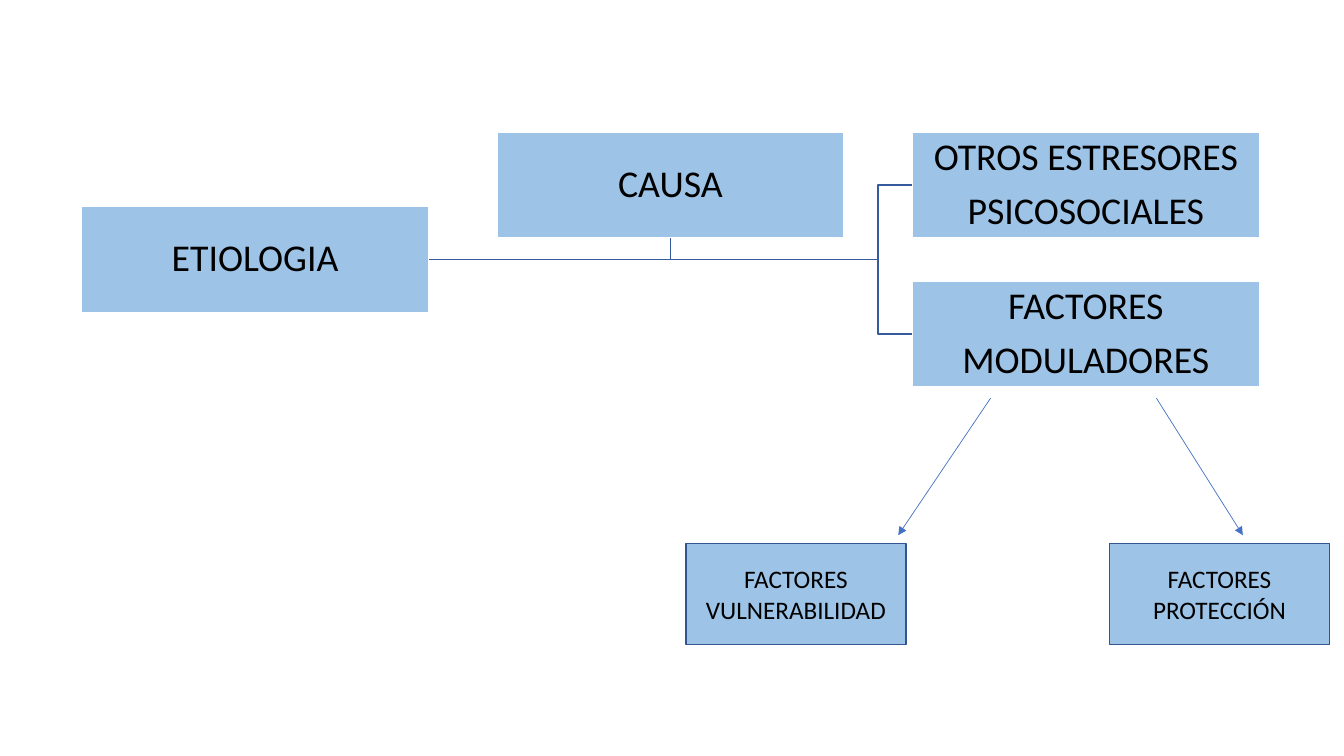
from dataclasses import dataclass

from lxml.etree import SubElement
from pptx import Presentation
from pptx.dml.color import RGBColor
from pptx.enum.shapes import MSO_CONNECTOR, MSO_SHAPE
from pptx.enum.text import MSO_ANCHOR, PP_ALIGN
from pptx.oxml.ns import qn
from pptx.util import Pt


@dataclass(frozen=True)
class Theme:
    font: str = "Calibri"
    tree_size: float = 27
    factor_size: float = 18
    box_fill: RGBColor = RGBColor(0x9D, 0xC3, 0xE6)
    text: RGBColor = RGBColor(0, 0, 0)
    tree_border: RGBColor = RGBColor(0xFF, 0xFF, 0xFF)
    branch: RGBColor = RGBColor(0x36, 0x5B, 0x9D)
    factor_border: RGBColor = RGBColor(0x32, 0x54, 0x91)
    arrow: RGBColor = RGBColor(0x44, 0x72, 0xC4)


THEME = Theme()

# Tree grid: columns from left to right, rows half a step apart
BOX_WIDTH, BOX_HEIGHT = 248, 75.4
TREE_LEFT, TREE_TOP = 58.2, 94.4
COLUMN_STEP, ROW_STEP = 296.7, 53.3

# Factor boxes below the tree
FACTOR_WIDTH, FACTOR_HEIGHT, FACTOR_TOP = 157.2, 72, 388.2
ARROW_TOP, ARROW_BOTTOM = 284.4, 382.3


def column_left(column):
    return TREE_LEFT + column * COLUMN_STEP


def row_middle(row):
    return TREE_TOP + row * ROW_STEP + BOX_HEIGHT / 2


def add_box(slide, lines, left, top, width, height, border, size):
    """Add a filled box with one centred paragraph per line."""
    box = slide.shapes.add_shape(
        MSO_SHAPE.RECTANGLE, Pt(left), Pt(top), Pt(width), Pt(height))
    box.shadow.inherit = False
    box.fill.solid()
    box.fill.fore_color.rgb = THEME.box_fill
    box.line.color.rgb = border
    box.line.width = Pt(1)
    frame = box.text_frame
    frame.word_wrap = True
    frame.vertical_anchor = MSO_ANCHOR.MIDDLE
    for index, line in enumerate(lines):
        paragraph = frame.paragraphs[0] if index == 0 else frame.add_paragraph()
        paragraph.text = line
        paragraph.alignment = PP_ALIGN.CENTER
        paragraph.font.name = THEME.font
        paragraph.font.size = Pt(size)
        paragraph.font.color.rgb = THEME.text
    return frame


def add_tree_box(slide, lines, column, row):
    frame = add_box(slide, lines, column_left(column), TREE_TOP + row * ROW_STEP,
                    BOX_WIDTH, BOX_HEIGHT, THEME.tree_border, THEME.tree_size)
    frame.margin_left = frame.margin_right = Pt(1.35)
    frame.margin_top = frame.margin_bottom = Pt(1.35)
    for paragraph in frame.paragraphs:
        paragraph.line_spacing = 0.9
        paragraph.space_after = Pt(0.35 * THEME.tree_size)


def add_branch(slide, points):
    """Add an open angled line through the points."""
    start, *others = [(Pt(x), Pt(y)) for x, y in points]
    builder = slide.shapes.build_freeform(*start)
    builder.add_line_segments(others, close=False)
    branch = builder.convert_to_shape()
    branch.shadow.inherit = False
    branch.fill.background()
    branch.line.color.rgb = THEME.branch
    branch.line.width = Pt(1)


def add_arrow(slide, start_x, end_x):
    arrow = slide.shapes.add_connector(
        MSO_CONNECTOR.STRAIGHT,
        Pt(start_x), Pt(ARROW_TOP), Pt(end_x), Pt(ARROW_BOTTOM))
    arrow.line.color.rgb = THEME.arrow
    arrow.line.width = Pt(0.5)
    SubElement(arrow.line._get_or_add_ln(), qn("a:tailEnd"), type="triangle")
    SubElement(arrow._element.spPr, qn("a:effectLst"))


def main():
    presentation = Presentation()
    presentation.slide_width, presentation.slide_height = Pt(960), Pt(540)
    slide = presentation.slides.add_slide(presentation.slide_layouts[6])

    # Branches from the root to its assistant and children
    root = (column_left(0) + BOX_WIDTH, row_middle(1))
    cause_x = column_left(1) + BOX_WIDTH / 2
    add_branch(slide, [root, (cause_x, root[1]), (cause_x, TREE_TOP + BOX_HEIGHT)])
    child_x = column_left(2)
    fork_x = child_x - (COLUMN_STEP - BOX_WIDTH) / 2
    for row in (2, 0):
        child_y = row_middle(row)
        add_branch(slide, [root, (fork_x, root[1]), (fork_x, child_y),
                           (child_x, child_y)])

    # Tree boxes
    for lines, column, row in (
        (["ETIOLOGIA"], 0, 1),
        (["OTROS ESTRESORES", "PSICOSOCIALES"], 2, 0),
        (["FACTORES", "MODULADORES"], 2, 2),
        (["CAUSA"], 1, 0),
    ):
        add_tree_box(slide, lines, column, row)

    # Modulating factors with their arrows
    for factor, left, start_x, end_x in (
        ("VULNERABILIDAD", 489.9, 707.6, 641.6),
        ("PROTECCIÓN", 792.5, 826, 887.8),
    ):
        add_arrow(slide, start_x, end_x)
        add_box(slide, ["FACTORES", factor], left, FACTOR_TOP, FACTOR_WIDTH,
                FACTOR_HEIGHT, THEME.factor_border, THEME.factor_size)

    presentation.save("out.pptx")


if __name__ == "__main__":
    main()
